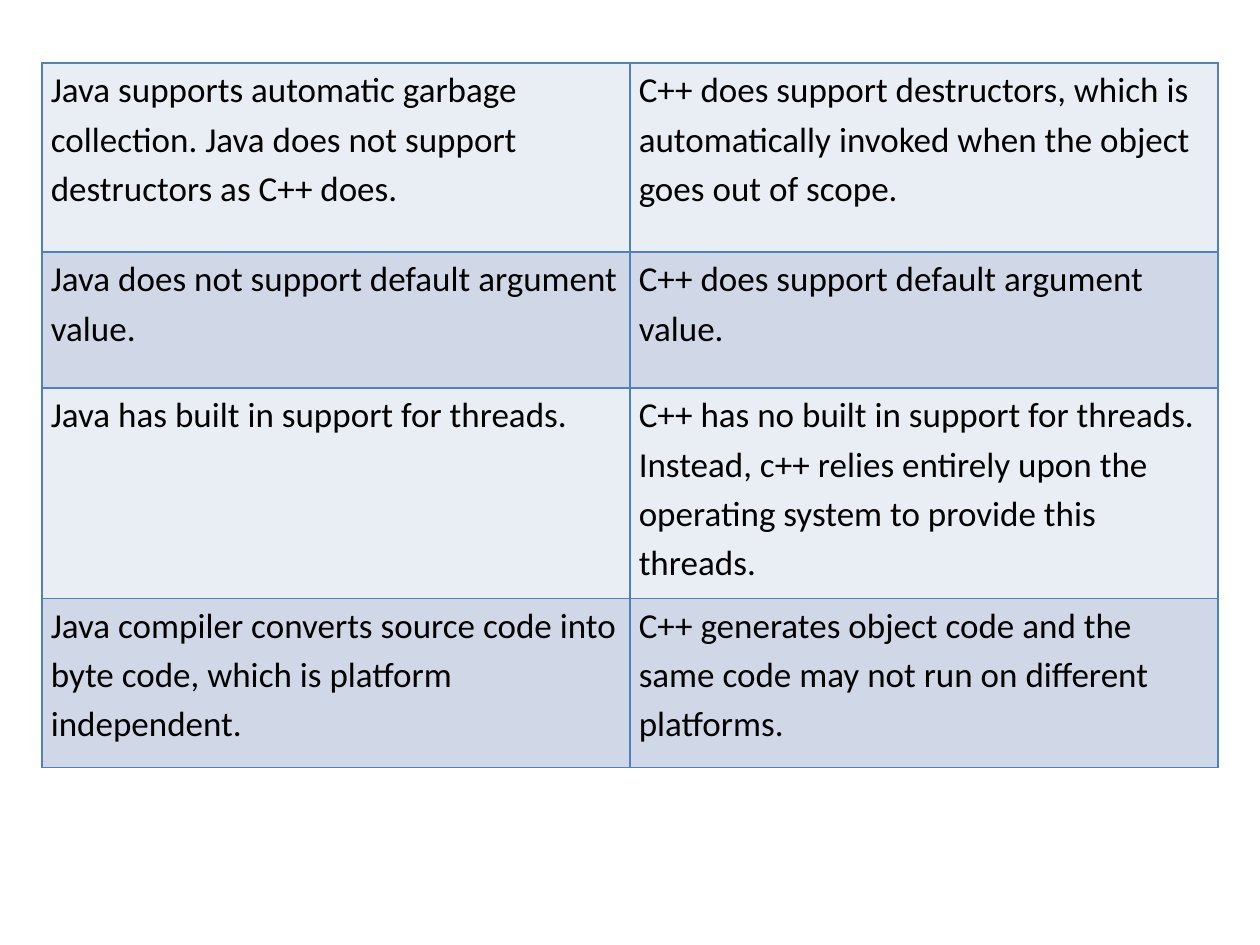
from lxml import etree
from pptx import Presentation
from pptx.dml.color import RGBColor
from pptx.oxml.ns import qn
from pptx import util as u

hues = {"ink": "000000", "line": "4F81BD", "light": "E9EDF4", "dark": "D0D8E8"}
rows = [
    (1.5, "Java supports automatic garbage collection. Java does not support destructors as C++ does.",
     "C++ does support destructors, which is automatically invoked when the object goes out of scope."),
    (1.08, "Java does not support default argument value.",
     "C++ does support default argument value."),
    (1.67, "Java has built in support for threads.",
     "C++ has no built in support for threads. Instead, c++ relies entirely upon the operating system to provide this threads."),
    (1.34, "Java compiler converts source code into byte code, which is platform independent.",
     "C++ generates object code and the same code may not run on different platforms."),
]


def write(frame, words, size=20, font="Calibri", hue="ink", lead=1.15, after=15):
    para = frame.paragraphs[0]
    para.line_spacing = lead
    para.space_after = u.Pt(after)
    run = para.add_run()
    run.text = words
    run.font.size = u.Pt(size)
    run.font.name = font
    run.font.color.rgb = RGBColor.from_string(hues[hue])


def edge(cell, hue="line", width=1):
    props = cell._tc.get_or_add_tcPr()
    for spot, side in enumerate(("lnL", "lnR", "lnT", "lnB")):
        line = etree.Element(qn(f"a:{side}"), w=str(u.Pt(width)))
        fill = etree.SubElement(line, qn("a:solidFill"))
        etree.SubElement(fill, qn("a:srgbClr"), val=hues[hue])
        props.insert(spot, line)


deck = Presentation()
deck.slide_width, deck.slide_height = u.Inches(10), u.Inches(7.5)
slide = deck.slides.add_slide(deck.slide_layouts[6])

left = deck.slide_width // 30
top = deck.slide_height // 15
wide = deck.slide_width - 2 * left
high = u.Inches(sum(row[0] for row in rows))
table = slide.shapes.add_table(len(rows), 2, left, top, wide, high).table
table.first_row = False
table.horz_banding = False

for r, (tall, *pair) in enumerate(rows):
    table.rows[r].height = u.Inches(tall)
    for c, words in enumerate(pair):
        cell = table.cell(r, c)
        cell.margin_left = cell.margin_right = u.Inches(0.07)
        cell.margin_top = cell.margin_bottom = 0
        cell.fill.solid()
        cell.fill.fore_color.rgb = RGBColor.from_string(hues["dark" if r % 2 else "light"])
        edge(cell)
        write(cell.text_frame, words)

deck.save("out.pptx")
